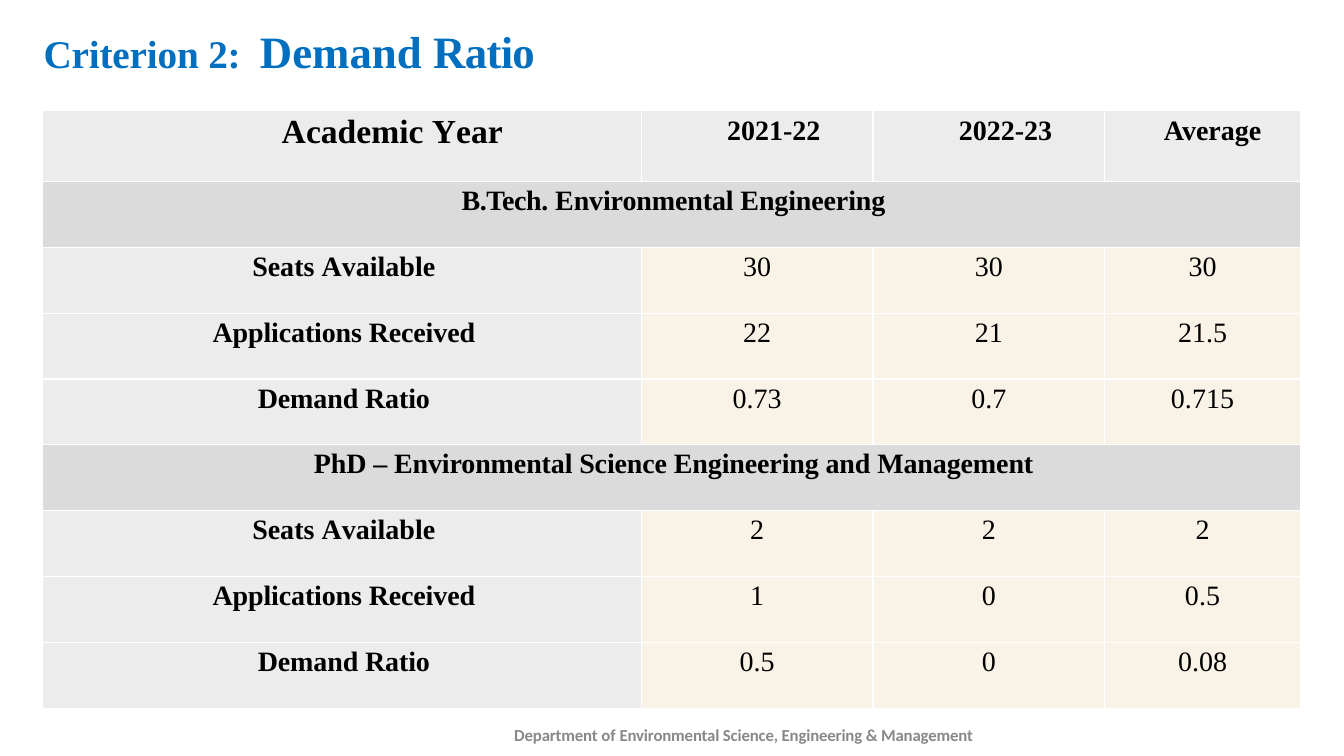
"""Builds the Criterion 2 demand ratio slide."""
import lxml.etree
import pptx
import pptx.dml.color
import pptx.enum.text
import pptx.oxml.ns
import pptx.util

Cm = pptx.util.Cm
Pt = pptx.util.Pt
RGBColor = pptx.dml.color.RGBColor
PP_ALIGN = pptx.enum.text.PP_ALIGN

BLUE = RGBColor(0x00, 0x6F, 0xC0)
GREY = RGBColor(0x88, 0x88, 0x88)
BLACK = RGBColor(0x00, 0x00, 0x00)
LABEL_FILL = RGBColor(0xEC, 0xEC, 0xEC)
SECTION_FILL = RGBColor(0xDB, 0xDB, 0xDB)
VALUE_FILL = RGBColor(0xF9, 0xF3, 0xE7)
WHITE = RGBColor(0xFF, 0xFF, 0xFF)

SERIF = "Times New Roman"


def write(frame, pieces, look, align=PP_ALIGN.LEFT, indent=0.03):
    """Fill a frame with (text, letter spacing, size) pieces."""
    paragraph = frame.paragraphs[0]
    paragraph.alignment = align
    paragraph._p.get_or_add_pPr().set("marL", str(Cm(indent)))
    for text, spacing, size in pieces:
        run = paragraph.add_run()
        run.text = text
        for name, value in look.items():
            setattr(run.font, name, value)
        run.font.size = Pt(size)
        run.font.color.rgb = look_color[look["name"], frame_role(frame)]
        run._r.get_or_add_rPr().set("spc", str(round(spacing * 100)))


def frame_role(frame):
    """Tell whether a frame belongs to a table cell or a text box."""
    return "cell" if frame._txBody.getparent().tag.endswith("}tc") else "box"


look_color = {(SERIF, "cell"): BLACK, (SERIF, "box"): BLUE, ("Calibri", "box"): GREY}

deck = pptx.Presentation()
deck.slide_width, deck.slide_height = Cm(33.87), Cm(19.05)
slide = deck.slides.add_slide(deck.slide_layouts[6])

headings = [
    ((1.07, 0.58, 14, 1.42), {"name": SERIF, "bold": True},
     [("Criterion 2:  ", -0.1, 28), ("Demand ", 0, 32), ("Ratio", -0.5, 32)]),
    ((12.93, 18.24, 12.67, 0.56), {"name": "Calibri", "bold": True},
     [("Department ", -0.1, 12), ("of ", 0, 12),
      ("Environmental Science, Engineering & Management", -0.1, 12)]),
]
for place, look, pieces in headings:
    frame = slide.shapes.add_textbox(*map(Cm, place)).text_frame
    margins = {"margin_left": 0, "margin_right": 0, "margin_top": Cm(0.03),
               "margin_bottom": 0, "word_wrap": True}
    for name, value in margins.items():
        setattr(frame, name, value)
    write(frame, pieces, look)

seats = [("Seats ", 0, 20), ("A", -1.2, 20), ("vailable", 0, 20)]
applications = [("Applications Received", -0.1, 20)]
ratio = [("Demand Ratio", -0.1, 20)]
header = [("Academic ", 0, 24), ("Y", -2.1, 24), ("ear", 0, 24)]
btech = [("B.Tech.", -0.3, 20), (" Environmental Engineering", -0.1, 20)]
phd = [("PhD – Environmental Science Engineering and Management", -0.1, 20)]
demand = [
    (header, ["2021-22", "2022-23", "Average"]),
    (btech, []),
    (seats, ["30", "30", "30"]),
    (applications, ["22", "21", "21.5"]),
    (ratio, ["0.73", "0.7", "0.715"]),
    (phd, []),
    (seats, ["2", "2", "2"]),
    (applications, ["1", "0", "0.5"]),
    (ratio, ["0.5", "0", "0.08"]),
]
column_widths = [15.09, 5.84, 5.84, 4.93]
header_indents = [2.54, 0.84, 0.84, 0.51]

table = slide.shapes.add_table(
    len(demand), len(column_widths), Cm(1.07), Cm(2.77), Cm(31.7), Cm(15.08)).table
for column, width in zip(table.columns, column_widths):
    column.width = Cm(width)

for row, (label, values) in enumerate(demand):
    table.rows[row].height = Cm(1.66 if row else 1.8)
    if not values:
        table.cell(row, 0).merge(table.cell(row, len(column_widths) - 1))
    texts = [label] + [[(value, 0, 20)] for value in values]
    for col in range(len(column_widths)):
        cell = table.cell(row, col)
        properties = cell._tc.get_or_add_tcPr()
        for side in ("a:lnL", "a:lnR", "a:lnT", "a:lnB"):
            border = lxml.etree.SubElement(
                properties, pptx.oxml.ns.qn(side), w=str(Pt(1)))
            solid = lxml.etree.SubElement(border, pptx.oxml.ns.qn("a:solidFill"))
            lxml.etree.SubElement(solid, pptx.oxml.ns.qn("a:srgbClr"), val=str(WHITE))
        is_value = row > 0 and col > 0
        cell.fill.solid()
        cell.fill.fore_color.rgb = (
            SECTION_FILL if not values else VALUE_FILL if is_value else LABEL_FILL)
        margins = {"margin_left": 0, "margin_right": 0, "margin_bottom": 0,
                   "margin_top": Cm(0.15 if row == 0 and col else 0.1)}
        for name, value in margins.items():
            setattr(cell, name, value)
        if col < len(texts):
            indent = header_indents[col] if row == 0 else 0 if is_value else 0.1
            write(cell.text_frame, texts[col], {"name": SERIF, "bold": not is_value},
                  PP_ALIGN.CENTER, indent)

deck.save("out.pptx")
